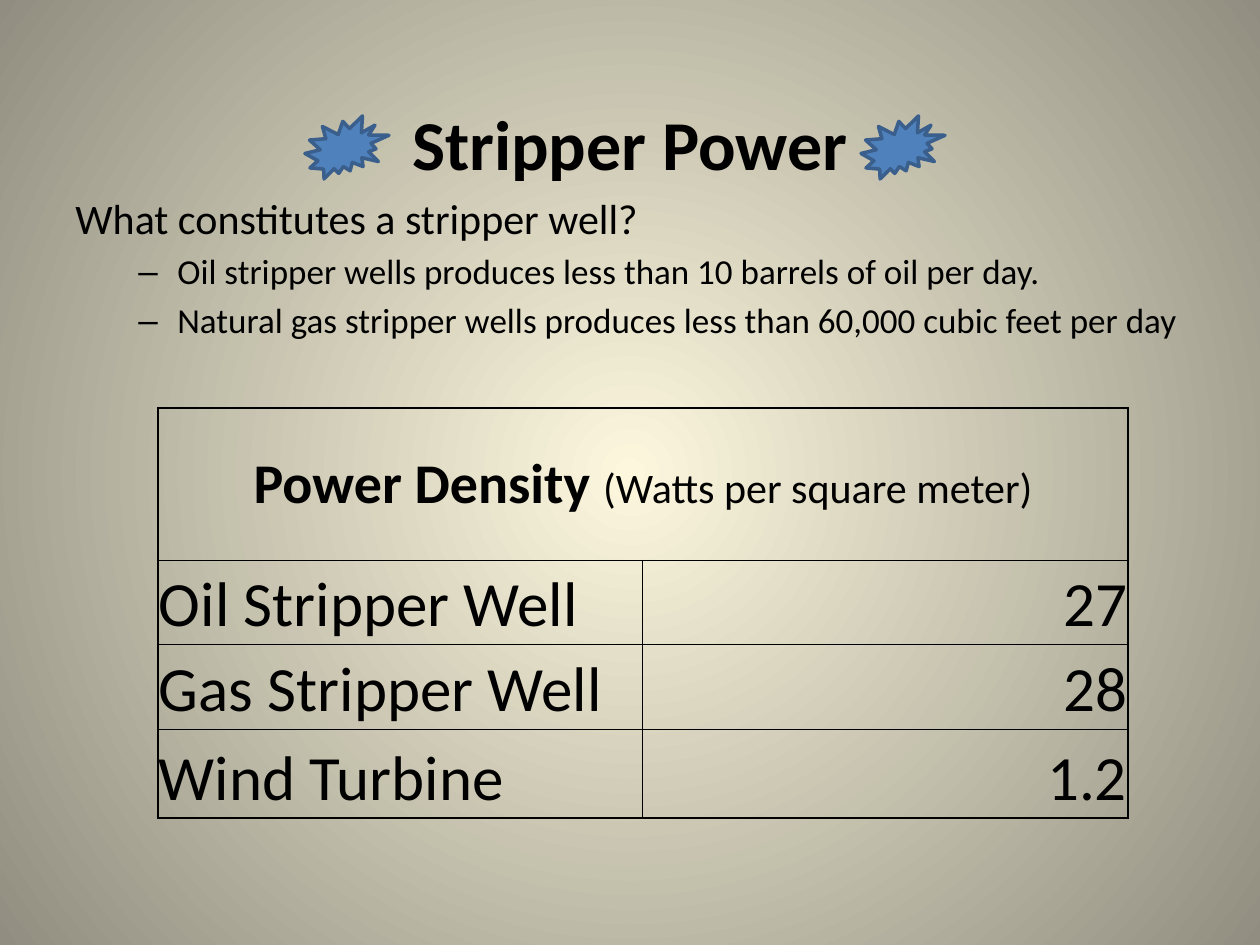
from lxml.etree import SubElement
from pptx import Presentation
from pptx.dml.color import RGBColor
from pptx.enum.shapes import MSO_SHAPE as Preset
from pptx.enum.text import MSO_ANCHOR as Anchor, PP_ALIGN as Align
from pptx.oxml import parse_xml
from pptx.oxml.ns import nsdecls, qn
from pptx.util import Pt

EMU_PER_PX = 914400 / 126
BLACK = "000000"


def px(length):
    return round(length * EMU_PER_PX)


def color(hex_code):
    return RGBColor.from_string(hex_code)


class WellSlide:
    font = "Calibri"

    def __init__(self, deck):
        self.slide = deck.slides.add_slide(deck.slide_layouts[6])

    def background(self, center, edge):
        self.slide.background.fill.solid()
        bg_pr = self.slide.background._cSld.find(qn("p:bg")).find(qn("p:bgPr"))
        gradient = parse_xml(
            f'<a:gradFill {nsdecls("a")} rotWithShape="1"><a:gsLst>'
            f'<a:gs pos="0"><a:srgbClr val="{center}"/></a:gs>'
            f'<a:gs pos="100000"><a:srgbClr val="{edge}"/></a:gs></a:gsLst>'
            '<a:path path="circle"><a:fillToRect l="50000" t="50000" r="50000" b="50000"/>'
            '</a:path></a:gradFill>')
        bg_pr.replace(bg_pr.find(qn("a:solidFill")), gradient)

    def run(self, paragraph, wording, size, bold=False):
        run = paragraph.add_run()
        run.text = wording
        run.font.name = self.font
        run.font.size = Pt(size)
        run.font.bold = bold
        run.font.color.rgb = color(BLACK)

    def body(self, left, top, width, height, lines):
        frame = self.slide.shapes.add_textbox(px(left), px(top), px(width), px(height)).text_frame
        frame.word_wrap = True
        for index, (wording, size, bold, align, bullet) in enumerate(lines):
            paragraph = frame.add_paragraph() if index else frame.paragraphs[0]
            paragraph.alignment = align
            paragraph.space_before = Pt(size * 0.2)
            paragraph.level = 1 if bullet else 0
            margin, hang = (102, 39) if bullet else (47, 47)
            p_pr = paragraph._p.get_or_add_pPr()
            p_pr.set("marL", str(px(margin)))
            p_pr.set("indent", str(-px(hang)))
            if bullet:
                SubElement(p_pr, qn("a:buFont")).set("typeface", "Arial")
                SubElement(p_pr, qn("a:buChar")).set("char", bullet)
            else:
                SubElement(p_pr, qn("a:buNone"))
            self.run(paragraph, wording, size, bold)

    def borders(self, cell, widths):
        tc_pr = cell._tc.get_or_add_tcPr()
        for side, width in zip("LRTB", widths):
            tc_pr.append(parse_xml(
                f'<a:ln{side} {nsdecls("a")} w="{Pt(width)}"><a:solidFill>'
                f'<a:srgbClr val="{BLACK}"/></a:solidFill></a:ln{side}>'))

    def table(self, left, top, columns, heights, rows):
        table = self.slide.shapes.add_table(
            len(heights), len(columns), px(left), px(top),
            px(sum(columns)), px(sum(heights))).table
        table.first_row = table.horz_banding = False
        for column, width in zip(table.columns, columns):
            column.width = px(width)
        for row, height in zip(table.rows, heights):
            row.height = px(height)
        table.cell(0, 0).merge(table.cell(0, len(columns) - 1))
        last_row, last_column = len(heights) - 1, len(columns) - 1
        for r, row in enumerate(rows):
            for c, runs in enumerate(row):
                cell = table.cell(r, c)
                cell.margin_left = cell.margin_right = cell.margin_top = px(1)
                cell.margin_bottom = 0
                cell.vertical_anchor = Anchor.BOTTOM if r else Anchor.MIDDLE
                outer = (c == 0, c == last_column or r == 0, r == 0, r == last_row)
                self.borders(cell, [1 if edge else 0.5 for edge in outer])
                cell.fill.background()
                paragraph = cell.text_frame.paragraphs[0]
                paragraph.alignment = (Align.RIGHT if c else Align.LEFT) if r else Align.CENTER
                for run in runs:
                    self.run(paragraph, *run)

    def burst(self, left, top, width, height):
        burst = self.slide.shapes.add_shape(
            Preset.EXPLOSION2, px(left), px(top), px(width), px(height))
        burst.shadow.inherit = False
        burst.fill.solid()
        burst.fill.fore_color.rgb = color("4F81BD")
        burst.line.color.rgb = color("3A5F8C")
        burst.line.width = Pt(2)


def main():
    deck = Presentation()
    deck.slide_width, deck.slide_height = px(1260), px(945)
    page = WellSlide(deck)
    page.background("FCF7DD", "918E81")
    page.body(63, 94, 1134, 750, [
        ("Stripper Power", 40, True, Align.CENTER, None),
        ("What constitutes a stripper well?", 24, False, Align.LEFT, None),
        ("Oil stripper wells produces less than 10 barrels of oil per day.",
         20, False, Align.LEFT, "–"),
        ("Natural gas stripper wells produces less than 60,000 cubic feet per day",
         20, False, Align.LEFT, "–"),
    ])
    densities = [("Oil Stripper Well", "27"), ("Gas Stripper Well", "28"), ("Wind Turbine", "1.2")]
    heading = [("Power Density ", 32, True), ("(Watts per square meter)", 24)]
    page.table(158, 408, [484, 486], [152, 84, 85, 89],
               [[heading, []]] + [[[(entry, 36)] for entry in pair] for pair in densities])
    for left in (861, 305):
        page.burst(left, 116, 84, 63)
    deck.save("out.pptx")


if __name__ == "__main__":
    main()
